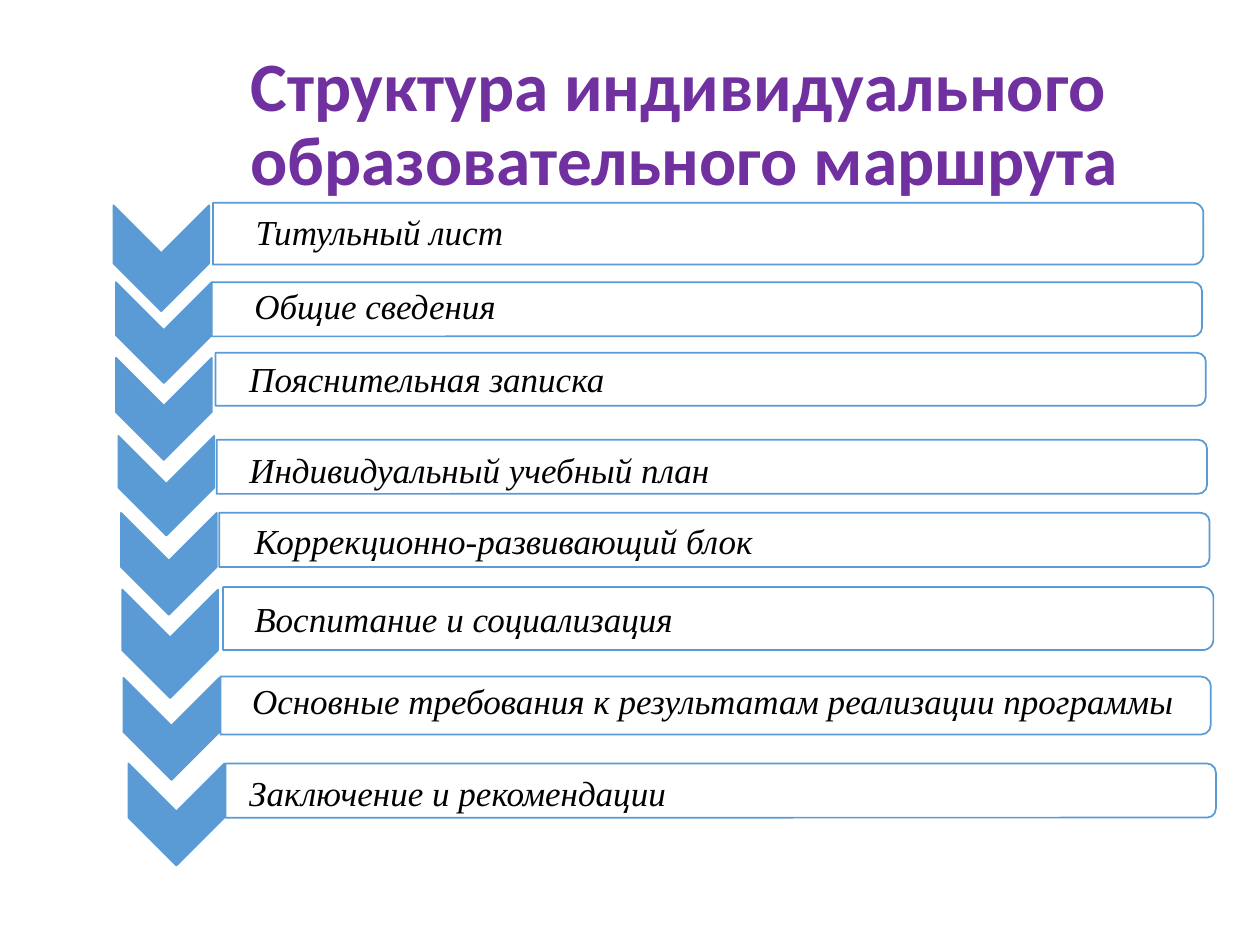
"""Build a slide listing the parts of an individual educational route."""
from lxml.etree import SubElement
from pptx import Presentation
from pptx.dml.color import RGBColor
from pptx.enum.shapes import MSO_SHAPE
from pptx.enum.text import MSO_ANCHOR, MSO_AUTO_SIZE
from pptx.oxml.ns import qn
from pptx.util import Inches, Pt

PURPLE = RGBColor(0x70, 0x30, 0xA0)
BLUE = RGBColor(0x5B, 0x9B, 0xD5)
WHITE = RGBColor(0xFF, 0xFF, 0xFF)
BLACK = RGBColor(0, 0, 0)

TITLE = "Структура индивидуального образовательного маршрута"
CHEVRON_WIDTH, BAR_LENGTH, LABEL_HEIGHT = 0.76, 7.86, 0.44
ROWS = [
    {"text": "Титульный лист", "chevron": (0.9, 1.63, 0.84),
     "bar": (1.69, 1.61, 0.49), "label": (1.93, 1.62, 2.18)},
    {"text": "Общие сведения", "chevron": (0.92, 2.24, 0.8),
     "bar": (1.68, 2.24, 0.43), "label": (1.92, 2.21, 2.13)},
    {"text": "Пояснительная записка", "chevron": (0.92, 2.84, 0.81),
     "bar": (1.71, 2.8, 0.42), "label": (1.88, 2.79, 3.04)},
    {"text": "Индивидуальный учебный план", "chevron": (0.94, 3.46, 0.79),
     "bar": (1.72, 3.49, 0.43), "label": (1.88, 3.51, 3.88)},
    {"text": "Коррекционно-развивающий блок", "chevron": (0.96, 4.07, 0.81),
     "bar": (1.74, 4.07, 0.43), "label": (1.92, 4.07, 4.19)},
    {"text": "Воспитание и социализация", "chevron": (0.97, 4.68, 0.86),
     "bar": (1.77, 4.66, 0.5), "label": (1.92, 4.69, 3.62)},
    {"text": "Основные требования к результатам реализации программы",
     "chevron": (0.98, 5.38, 0.81), "bar": (1.75, 5.37, 0.46),
     "label": (1.76, 5.34, 7.85), "indent": 0.14},
    {"text": "Заключение и рекомендации", "chevron": (1.02, 6.06, 0.81),
     "bar": (1.79, 6.06, 0.43), "label": (1.88, 6.07, 3.66)},
]


def add_turned(page, kind, place, width, fill, opacity=100):
    left, top, height = place
    middle_x, middle_y = left + width / 2, top + height / 2
    shape = page.shapes.add_shape(
        kind, Inches(middle_x - height / 2), Inches(middle_y - width / 2),
        Inches(height), Inches(width))
    shape.rotation = 90
    shape.shadow.inherit = False
    shape.fill.solid()
    shape.fill.fore_color.rgb = fill
    if opacity < 100:
        color = shape.fill._xPr.find(qn("a:solidFill"))[0]
        SubElement(color, qn("a:alpha"), val=str(opacity * 1000))
    shape.line.color.rgb = BLUE
    shape.line.width = Pt(1)


def add_text(page, text, place, font, size, color, bold=False, italic=False,
             wrap=True, grow=False, anchor=MSO_ANCHOR.TOP, spacing=1.0, indent=0):
    box = page.shapes.add_textbox(*[Inches(value) for value in place])
    frame = box.text_frame
    frame.word_wrap = wrap
    frame.auto_size = MSO_AUTO_SIZE.SHAPE_TO_FIT_TEXT if grow else MSO_AUTO_SIZE.NONE
    frame.vertical_anchor = anchor
    frame.margin_left = Inches(0.1 + indent)
    para = frame.paragraphs[0]
    para.line_spacing = spacing
    span = para.add_run()
    span.text = text
    span.font.name = font
    span.font.size = Pt(size)
    span.font.color.rgb = color
    span.font.bold = bold
    span.font.italic = italic


def main():
    deck = Presentation()
    deck.slide_width, deck.slide_height = Inches(10), Inches(7.5)
    page = deck.slides.add_slide(deck.slide_layouts[6])
    add_text(page, TITLE, (1.89, 0.4, 7.68, 1.2), "Calibri", 39.6, PURPLE,
             bold=True, anchor=MSO_ANCHOR.MIDDLE, spacing=0.9)
    for row in ROWS:
        add_turned(page, MSO_SHAPE.CHEVRON, row["chevron"], CHEVRON_WIDTH, BLUE)
        add_turned(page, MSO_SHAPE.ROUND_2_SAME_RECTANGLE, row["bar"],
                   BAR_LENGTH, WHITE, opacity=90)
    for row in ROWS:
        indent = row.get("indent", 0)
        add_text(page, row["text"], (*row["label"], LABEL_HEIGHT),
                 "Times New Roman", 20, BLACK, italic=True, grow=True,
                 wrap=indent > 0, indent=indent)
    deck.save("out.pptx")


if __name__ == "__main__":
    main()
